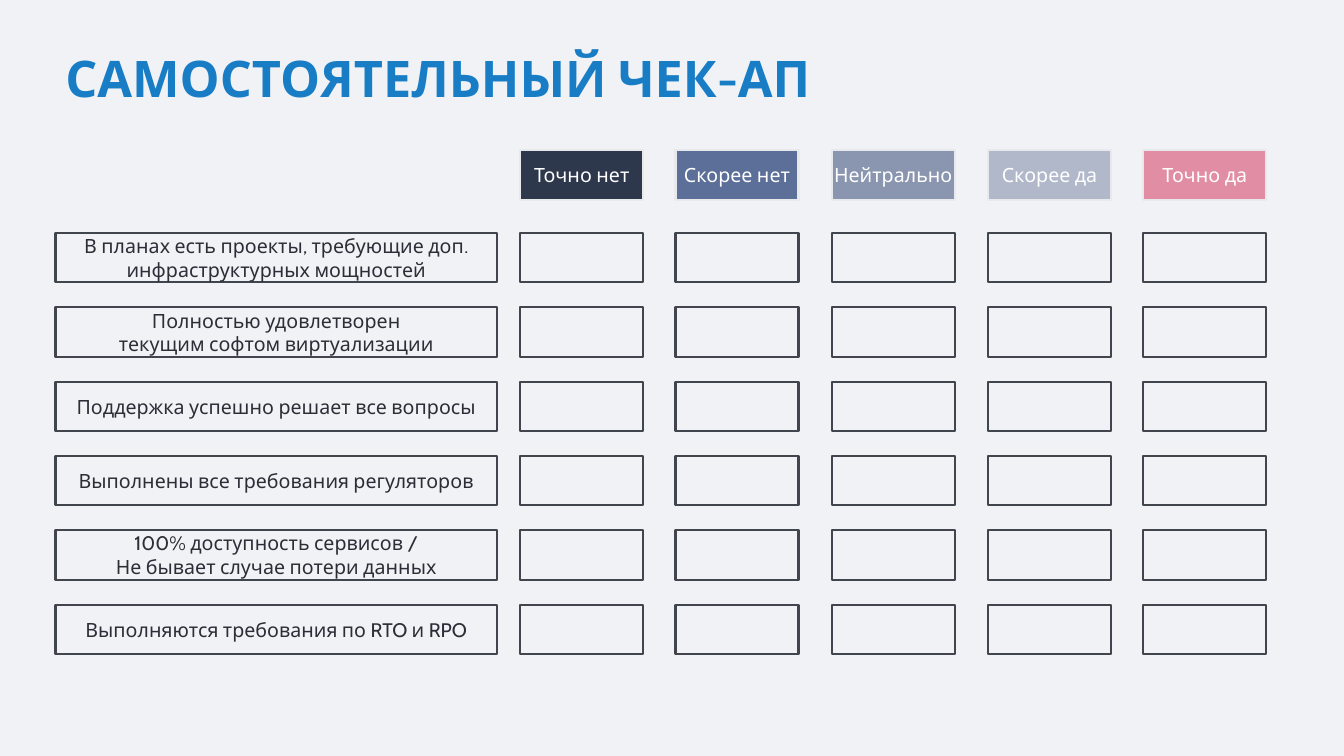
from dataclasses import dataclass

from pptx import Presentation
from pptx.dml.color import RGBColor
from pptx.enum.shapes import MSO_SHAPE
from pptx.enum.text import MSO_ANCHOR, PP_ALIGN
from pptx.util import Emu, Pt

PX = 9144


@dataclass(frozen=True)
class Theme:
    font: str = "Cabin"
    title_size: int = 36
    body_size: int = 14
    border: float = 1.5
    page: str = "F0F2F6"
    title: str = "187DC5"
    ink: str = "2B2E36"
    outline: str = "40454E"
    header_text: str = "FFFFFF"
    header_outline: str = "E8E9ED"


def write(frame, text, size, color, font, bold=False,
          align=PP_ALIGN.LEFT, anchor=MSO_ANCHOR.TOP, insets=(0, 0, 0, 0)):
    frame.word_wrap = True
    frame.vertical_anchor = anchor
    left, top, right, bottom = (Emu(inset * PX) for inset in insets)
    frame.margin_left, frame.margin_top = left, top
    frame.margin_right, frame.margin_bottom = right, bottom
    for index, line in enumerate(text.split("\n")):
        para = frame.add_paragraph() if index else frame.paragraphs[0]
        para.alignment = align
        span = para.add_run()
        span.text = line
        span.font.name = font
        span.font.size = Pt(size)
        span.font.bold = bold
        span.font.color.rgb = RGBColor.from_string(color)


class Builder:
    def __init__(self, deck, theme):
        self.theme = theme
        self.page = deck.slides.add_slide(deck.slide_layouts[6])
        background = self.page.background.fill
        background.solid()
        background.fore_color.rgb = RGBColor.from_string(theme.page)

    def title(self, text, *area):
        box = self.page.shapes.add_textbox(*(Emu(side * PX) for side in area))
        write(box.text_frame, text, self.theme.title_size, self.theme.title,
              self.theme.font, bold=True, insets=(10, 3, 10, 5))

    def box(self, area, outline, text="", color=None, fill=None):
        shape = self.page.shapes.add_shape(
            MSO_SHAPE.RECTANGLE, *(Emu(side * PX) for side in area))
        shape.shadow.inherit = False
        if fill:
            shape.fill.solid()
            shape.fill.fore_color.rgb = RGBColor.from_string(fill)
        else:
            shape.fill.background()
        shape.line.color.rgb = RGBColor.from_string(outline)
        shape.line.width = Pt(self.theme.border)
        if text:
            write(shape.text_frame, text, self.theme.body_size, color,
                  self.theme.font, align=PP_ALIGN.CENTER,
                  anchor=MSO_ANCHOR.MIDDLE)

    def header(self, text, fill, *area):
        self.box(area, self.theme.header_outline, text,
                 self.theme.header_text, fill)

    def statement(self, text, *area):
        self.box(area, self.theme.outline, text, self.theme.ink)

    def answer(self, *area):
        self.box(area, self.theme.outline)


ANSWERS = [
    ("Точно нет", "2E384C"),
    ("Скорее нет", "5B6F98"),
    ("Нейтрально", "8A95AF"),
    ("Скорее да", "B1B8CA"),
    ("Точно да", "E18EA4"),
]
STATEMENTS = [
    "В планах есть проекты, требующие доп. инфраструктурных мощностей",
    "Полностью удовлетворен\nтекущим софтом виртуализации",
    "Поддержка успешно решает все вопросы",
    "Выполнены все требования регуляторов",
    "100% доступность сервисов /\nНе бывает случае потери данных",
    "Выполняются требования по RTO и RPO",
]
LEFT, STATEMENT_WIDTH = 55, 438
ANSWER_WIDTH, HEIGHT = 122, 49
HEADER_TOP = 149
COLUMNS = [round(516 + 154.5 * index) for index in range(len(ANSWERS))]
ROWS = [round(231 + 73.8 * index) for index in range(len(STATEMENTS))]


def main():
    deck = Presentation()
    deck.slide_width, deck.slide_height = Emu(1333 * PX), Emu(750 * PX)
    builder = Builder(deck, Theme())
    builder.title("САМОСТОЯТЕЛЬНЫЙ ЧЕК-АП", LEFT, 44, 1047, 55)
    for column, (text, fill) in zip(COLUMNS, ANSWERS):
        builder.header(text, fill, column, HEADER_TOP, ANSWER_WIDTH, HEIGHT)
    for row, text in zip(ROWS, STATEMENTS):
        builder.statement(text, LEFT, row, STATEMENT_WIDTH, HEIGHT)
        for column in COLUMNS:
            builder.answer(column, row, ANSWER_WIDTH, HEIGHT)
    deck.save("out.pptx")


if __name__ == "__main__":
    main()
